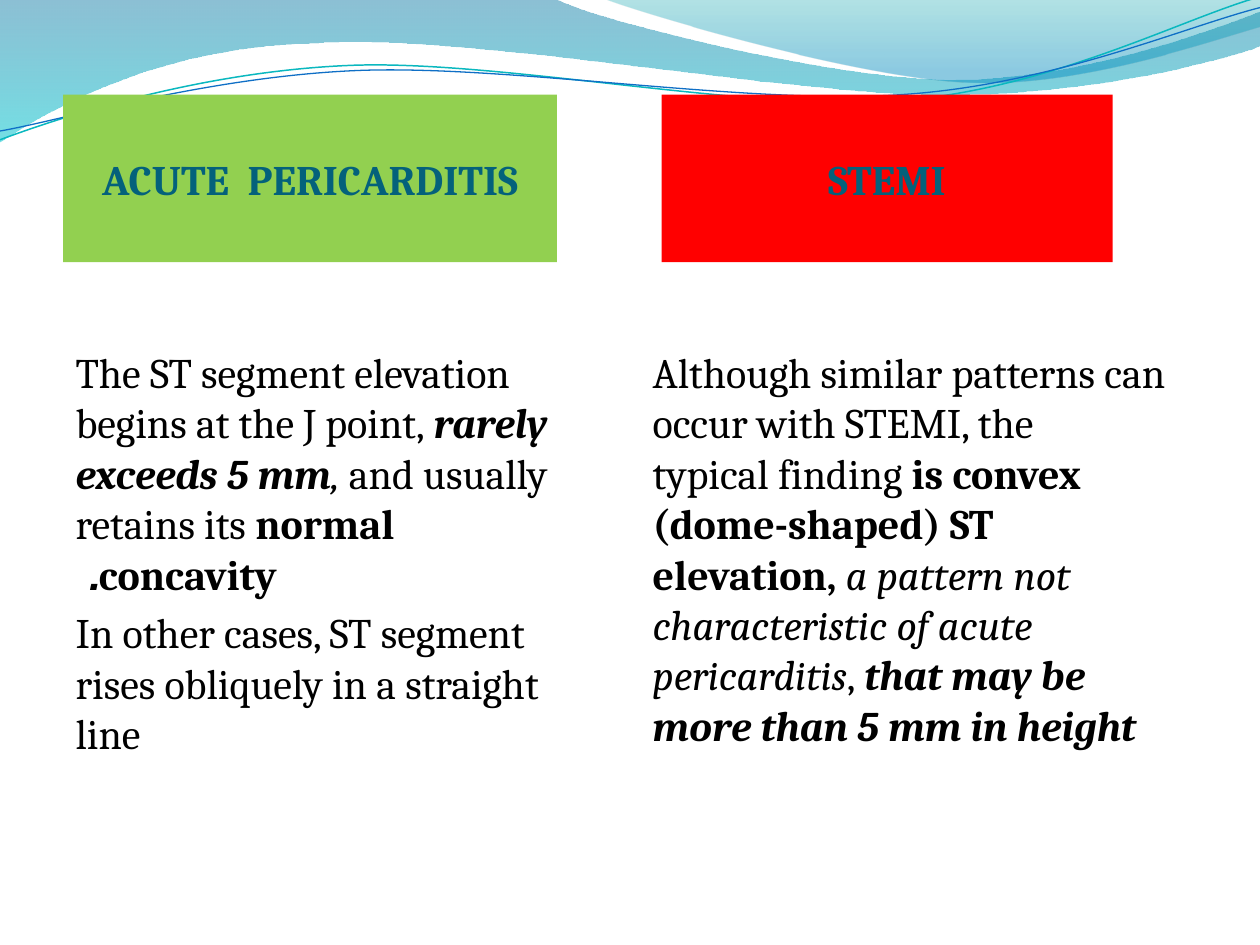
import math

from lxml import etree
from pptx import Presentation
from pptx import util as u
from pptx.dml.color import RGBColor
from pptx.enum import text
from pptx.oxml.ns import qn

FONT = "Cambria"
INK = "000000"
HEADING_INK = "04617B"
TILT = 357.3


def colour(hex_string):
    return RGBColor.from_string(hex_string)


def untilt(point, box, degrees):
    left, top, width, height = box
    dx, dy = point[0] - left - width / 2, point[1] - top - height / 2
    angle = math.radians(-degrees)
    return (width / 2 + dx * math.cos(angle) - dy * math.sin(angle),
            height / 2 + dx * math.sin(angle) + dy * math.cos(angle))


def draw_curve(slide, box, start, segments, closed, rotation=0):
    left, top, width, height = map(u.Inches, box)
    builder = slide.shapes.build_freeform(left, top)
    builder.add_line_segments([(left + width, top + height)], close=closed)
    curve = builder.convert_to_shape()
    curve.rotation = rotation
    curve.shadow.inherit = False
    outline = next(curve._element.iter(qn("a:path")))
    for command in list(outline):
        outline.remove(command)

    def add_command(tag, points):
        command = etree.SubElement(outline, qn(tag))
        for point in points:
            x, y = untilt(point, box, rotation)
            etree.SubElement(command, qn("a:pt"), x=str(u.Inches(x)), y=str(u.Inches(y)))

    add_command("a:moveTo", [start])
    for segment in segments:
        points = list(zip(segment[::2], segment[1::2]))
        add_command("a:lnTo" if len(points) == 1 else "a:cubicBezTo", points)
    if closed:
        etree.SubElement(outline, qn("a:close"))
    return curve


def add_wave(slide, box, start, segments, stops):
    wave = draw_curve(slide, box, start, segments, True)
    wave.line.fill.background()
    wave.fill.gradient()
    wave.fill.gradient_angle = 270
    for stop, (position, hex_string, opacity) in zip(wave.fill.gradient_stops, stops):
        stop.position = position
        stop.color.rgb = colour(hex_string)
        rgb = stop._gs.find(qn("a:srgbClr"))
        etree.SubElement(rgb, qn("a:alpha"), val=str(opacity * 1000))


def add_ripple(slide, box, start, segments, hex_string, width):
    ripple = draw_curve(slide, box, start, segments, False, TILT)
    ripple.fill.background()
    ripple.line.color.rgb = colour(hex_string)
    ripple.line.width = u.Pt(width)


def add_banner(slide):
    add_wave(slide, (-0.01, -0.01, 10.02, 1.14), (0, 0), [
        (4.4, -0.01), (4.76, 0.17, 6.64, 0.63, 7.58, 0.63),
        (8.53, 0.63, 9.58, 0.26, 10, 0.09), (10.01, 0.36),
        (9.83, 0.44, 8.7, 0.76, 7.46, 0.75), (6.22, 0.75, 3.82, 0.28, 2.57, 0.34),
        (1.29, 0.36, 0.46, 0.83, -0.01, 1.13), (0, 0),
    ], [(0, "0074A1", 45), (1, "00C6CF", 55)])
    add_wave(slide, (4.79, -0.01, 5.21, 0.7), (4.79, -0.01), [
        (5.09, 0.11, 6.82, 0.62, 7.69, 0.65), (8.56, 0.69, 9.61, 0.32, 10, 0.21),
        (10, 0), (4.79, -0.01),
    ], [(0, "00A1A9", 30), (0.8, "008BBF", 45)])
    add_ripple(slide, (-0.02, 0.22, 10.02, 0.71), (0, 1.11), [
        (0.48, 0.93, 1.58, 0.57, 2.77, 0.52), (3.95, 0.47, 5.93, 0.89, 7.13, 0.8),
        (8.33, 0.71, 9.38, 0.15, 9.98, -0.02),
    ], "0AB8BF", 0.85)
    add_ripple(slide, (-0.02, 0.3, 10.03, 0.58), (0, 1.04), [
        (0.47, 0.96, 1.64, 0.61, 2.83, 0.56), (4.03, 0.51, 5.97, 0.84, 7.17, 0.75),
        (8.36, 0.67, 9.41, 0.21, 10, 0.06),
    ], "0F6FC6", 0.75)


def place(holder, box, insets, anchor):
    holder.left, holder.top, holder.width, holder.height = map(u.Inches, box)
    frame = holder.text_frame
    frame.word_wrap = True
    frame.auto_size = text.MSO_AUTO_SIZE.NONE
    frame.vertical_anchor = anchor
    (frame.margin_left, frame.margin_top,
     frame.margin_right, frame.margin_bottom) = map(u.Inches, insets)
    return frame


def write_paragraph(paragraph, runs, hex_string, align, indent):
    paragraph.alignment = align
    paragraph.space_before = u.Pt(4.8)
    properties = paragraph._p.get_or_add_pPr()
    properties.set("rtl", "1")
    properties.set("marL", str(u.Inches(indent)))
    properties.set("indent", str(-u.Inches(indent)))
    etree.SubElement(properties, qn("a:buNone"))
    for words, style in runs:
        run = paragraph.add_run()
        run.text = words
        run.font.name = FONT
        run.font.size = u.Pt(24)
        run.font.bold = "b" in style
        run.font.italic = "i" in style
        run.font.color.rgb = colour(hex_string)


def fill_heading(holder, box, words, background):
    frame = place(holder, box, (0.05, 0, 0.05, 0), text.MSO_ANCHOR.MIDDLE)
    holder.fill.solid()
    holder.fill.fore_color.rgb = colour(background)
    write_paragraph(frame.paragraphs[0], [(words, "b")], HEADING_INK,
                    text.PP_ALIGN.CENTER, 0)


def fill_findings(holder, box, paragraphs):
    frame = place(holder, box, (0.1, 0, 0.1, 0.05), text.MSO_ANCHOR.TOP)
    for number, runs in enumerate(paragraphs):
        paragraph = frame.add_paragraph() if number else frame.paragraphs[0]
        write_paragraph(paragraph, runs, INK, text.PP_ALIGN.LEFT, 0.3)


def main():
    deck = Presentation()
    deck.slide_width, deck.slide_height = u.Inches(10), u.Inches(7.5)
    slide = deck.slides.add_slide(deck.slide_layouts[4])
    title, *columns = slide.placeholders
    tree = slide.shapes._spTree
    tree.remove(title._element)
    add_banner(slide)
    left_heading, left_findings, right_heading, right_findings = columns
    for holder in columns:
        tree.append(holder._element)

    fill_heading(left_heading, (0.5, 0.75, 3.92, 1.33), "ACUTE  PERICARDITIS", "92D050")
    fill_findings(left_findings, (0.5, 2.75, 4.42, 4.21), [
        [("The ST segment elevation begins at the J point, ", ""),
         ("rarely exceeds 5 mm", "bi"), (", ", "i"),
         ("and usually retains its ", ""), ("normal concavity", "b"), (". ", "bi")],
        [("In other cases, ST segment rises obliquely in a straight line", "")],
    ])
    fill_heading(right_heading, (5.25, 0.75, 3.58, 1.33), "STEMI", "FF0000")
    fill_findings(right_findings, (5.08, 2.75, 4.42, 4.21), [
        [("Although similar patterns can occur with STEMI, the typical finding ", ""),
         ("is convex (dome-shaped) ST elevation, ", "b"),
         ("a pattern not characteristic of acute pericarditis", "i"), (", ", ""),
         ("that may be more than 5 mm in height", "bi")],
    ])
    deck.save("out.pptx")


if __name__ == "__main__":
    main()
